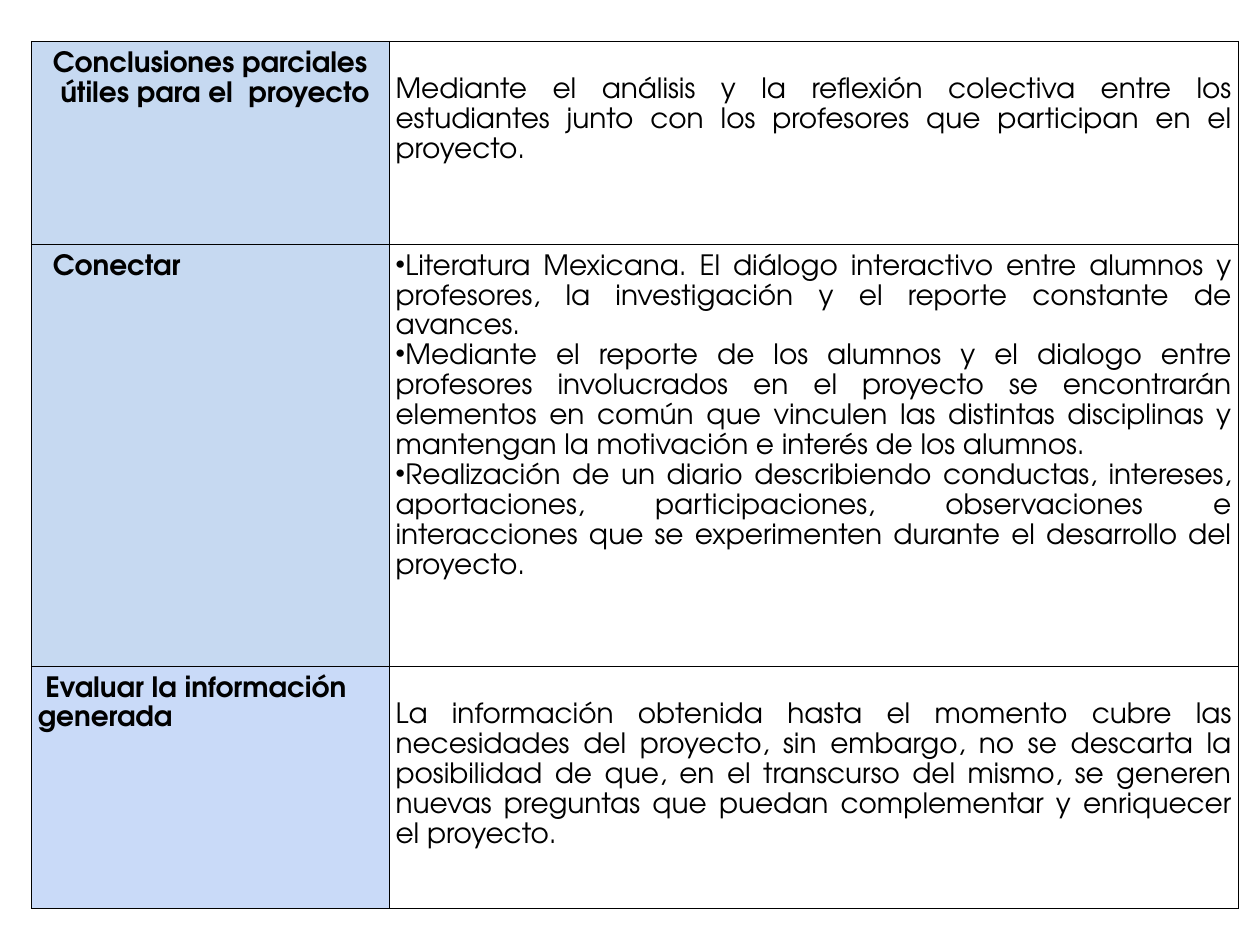
from lxml import etree
from pptx import Presentation
from pptx.dml.color import RGBColor
from pptx.enum.text import PP_ALIGN
from pptx.oxml.ns import qn
from pptx.util import Inches, Pt

LEFT, JUSTIFY = PP_ALIGN.LEFT, PP_ALIGN.JUSTIFY
FONT = "TeX Gyre Adventor"
COLORS = {"text": "000000", "border": "000000", "label": "C6D9F1",
          "last_label": "C9DAF8", "body": "FFFFFF"}
MARGIN = 0.05
BODY_TOP = 0.26
COL_WIDTHS = [2.84, 6.74]
ROWS = [
    {"height": 1.61, "fill": "label", "top": BODY_TOP, "bullets": False,
     "label": [("Conclusiones parciales", 0.12), ("útiles para el  proyecto", 0.18)],
     "body": ["Mediante el análisis y la reflexión colectiva entre los estudiantes junto con "
              "los profesores que participan en el proyecto."]},
    {"height": 3.35, "fill": "label", "top": MARGIN, "bullets": True,
     "label": [("Conectar", 0.12)],
     "body": ["Literatura Mexicana. El diálogo interactivo entre alumnos y profesores, la "
              "investigación y el reporte constante de avances.",
              "Mediante el reporte de los alumnos y el dialogo entre profesores involucrados "
              "en el proyecto se encontrarán elementos en común que vinculen las distintas "
              "disciplinas y mantengan la motivación e interés de los alumnos.",
              "Realización de un diario describiendo conductas, intereses, aportaciones, "
              "participaciones, observaciones e interacciones que se experimenten durante el "
              "desarrollo del proyecto."]},
    {"height": 1.92, "fill": "last_label", "top": BODY_TOP, "bullets": False,
     "label": [("Evaluar la información generada", 0.06)],
     "body": ["La información obtenida hasta el momento cubre las necesidades del proyecto, "
              "sin embargo, no se descarta la posibilidad de que, en el transcurso del mismo, "
              "se generen nuevas preguntas que puedan complementar y enriquecer el proyecto."]},
]


def rgb(name):
    return RGBColor.from_string(COLORS[name])


def set_borders(cell):
    tcPr = cell._tc.get_or_add_tcPr()
    for i, side in enumerate(("lnL", "lnR", "lnT", "lnB")):
        ln = etree.Element(qn(f"a:{side}"), w=str(Pt(1)))
        fill = etree.SubElement(ln, qn("a:solidFill"))
        etree.SubElement(fill, qn("a:srgbClr"), val=COLORS["border"])
        tcPr.insert(i, ln)


def format_cell(cell, fill, top=MARGIN):
    cell.margin_left = cell.margin_right = cell.margin_bottom = Inches(MARGIN)
    cell.margin_top = Inches(top)
    cell.fill.solid()
    cell.fill.fore_color.rgb = rgb(fill)
    set_borders(cell)


def write_paragraphs(cell, items, align, bold, bullets=False):
    tf = cell.text_frame
    for i, (text, indent) in enumerate(items):
        p = tf.add_paragraph() if i else tf.paragraphs[0]
        p.text = text
        p.alignment = align
        p.line_spacing = 1.15
        pPr = p._p.get_or_add_pPr()
        pPr.set("marL", "0")
        pPr.set("indent", str(Inches(indent)))
        if bullets:
            etree.SubElement(pPr, qn("a:buChar"), char="•")
        for r in p.runs:
            r.font.name = FONT
            r.font.size = Pt(16)
            r.font.bold = bold
            r.font.color.rgb = rgb("text")


def add_project_table(slide):
    height = sum(row["height"] for row in ROWS)
    table = slide.shapes.add_table(len(ROWS), len(COL_WIDTHS), Inches(0.25), Inches(0.33),
                                   Inches(sum(COL_WIDTHS)), Inches(height)).table
    table.first_row = table.horz_banding = False
    for column, width in zip(table.columns, COL_WIDTHS):
        column.width = Inches(width)
    for i, row in enumerate(ROWS):
        table.rows[i].height = Inches(row["height"])
        label, body = table.cell(i, 0), table.cell(i, 1)
        format_cell(label, row["fill"])
        write_paragraphs(label, row["label"], LEFT, True)
        format_cell(body, "body", row["top"])
        write_paragraphs(body, [(text, 0) for text in row["body"]], JUSTIFY, False,
                         row["bullets"])


def main():
    prs = Presentation()
    prs.slide_width, prs.slide_height = Inches(10), Inches(7.5)
    slide = prs.slides.add_slide(prs.slide_layouts[6])
    add_project_table(slide)
    prs.save("out.pptx")


if __name__ == "__main__":
    main()
